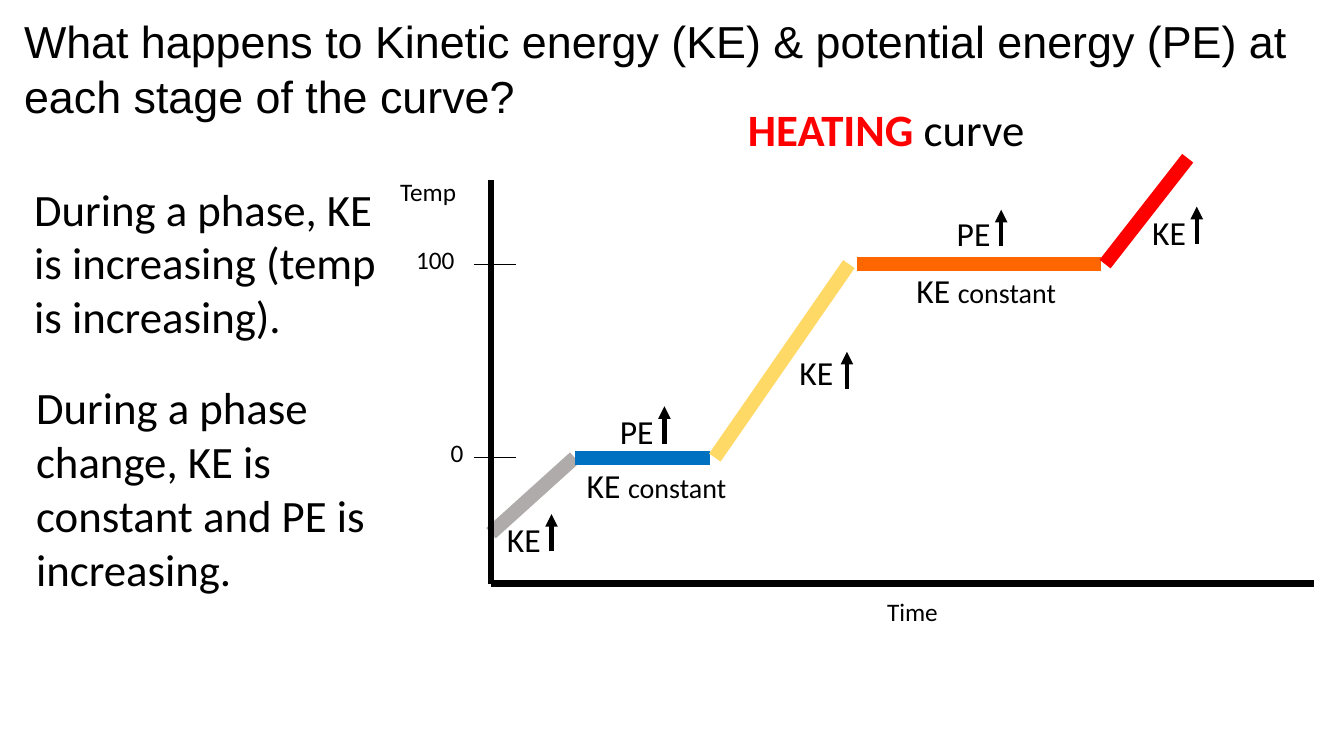
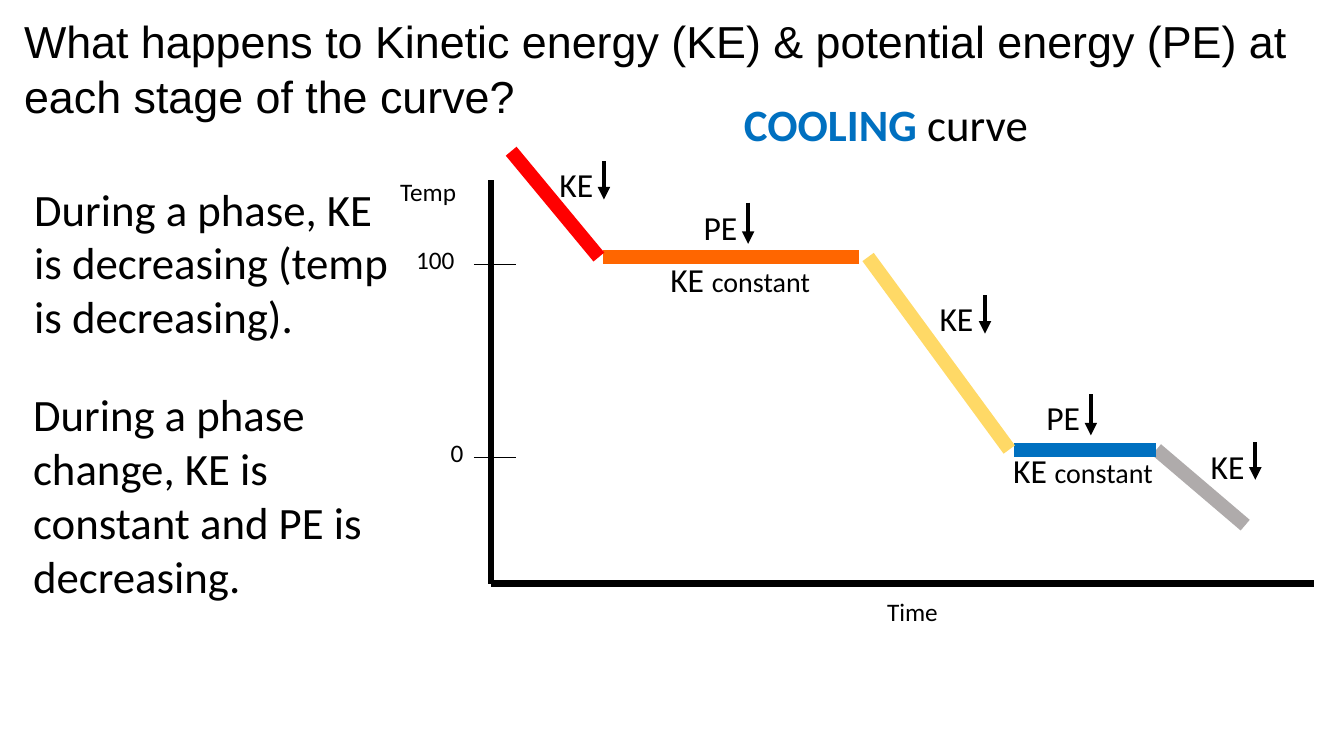
"""Build two slides on kinetic and potential energy along heating and cooling curves."""
from lxml import etree
from pptx import Presentation
from pptx import util as u
from pptx.dml.color import RGBColor
from pptx.enum import shapes, text
from pptx.oxml.ns import qn

PX = 9144
BLACK, RED, ORANGE = "000000", "FF0000", "FF6600"
YELLOW, BLUE, GRAY = "FFD966", "0070C0", "AFABAB"
TITLE = "What happens to Kinetic energy (KE) & potential energy (PE) at each stage of the curve?"
TITLE_BOX = (14, 8, 1319, 118)

AXIS_LINES = [
    (487, 179, 487, 579, 4.5),
    (487, 579, 1303, 579, 4.5),
    (470, 454, 512, 454, 0.75),
    (470, 262, 512, 262, 0.75),
]
AXIS_LABELS = [
    ("0", (437, 429, 37, 50)),
    ("100", (403, 237, 70, 50)),
    ("Time", (870, 587, 90, 50)),
    ("Temp", (387, 170, 98, 50)),
]

CURVES = [
    {
        "heading": ("HEATING", RED, (732, 96, 307, 64)),
        "statements": [
            ("During a phase, KE is increasing (temp is increasing).", (24, 175, 360, 172)),
            ("During a phase change, KE is constant and PE is increasing.", (26, 372, 360, 226)),
        ],
        "segments": [
            (487, 529, 570, 454, GRAY),
            (570, 454, 704, 454, BLUE),
            (709, 454, 842, 262, YELLOW),
            (850, 262, 1092, 262, ORANGE),
            (1096, 262, 1178, 157, RED),
        ],
        "constants": [(572, 456), (899, 263)],
        "changes": [
            ("KE", 493, 510, 547, 547, 510),
            ("PE", 605, 403, 659, 440, 403),
            ("KE", 783, 344, 840, 386, 349),
            ("PE", 939, 206, 993, 244, 208),
            ("KE", 1133, 205, 1187, 242, 205),
        ],
    },
    {
        "heading": ("COOLING", BLUE, (728, 91, 315, 64)),
        "statements": [
            ("During a phase, KE is decreasing (temp is decreasing).", (24, 175, 384, 172)),
            ("During a phase change, KE is constant and PE is decreasing.", (23, 379, 360, 226)),
        ],
        "segments": [
            (1235, 521, 1147, 446, GRAY),
            (1147, 446, 1006, 446, BLUE),
            (1001, 446, 861, 255, YELLOW),
            (852, 255, 598, 255, ORANGE),
            (594, 255, 507, 150, RED),
        ],
        "constants": [(655, 252), (995, 441)],
        "changes": [
            ("KE", 545, 158, 599, 160, 198),
            ("PE", 688, 200, 742, 201, 242),
            ("KE", 922, 291, 977, 293, 331),
            ("PE", 1028, 389, 1082, 391, 432),
            ("KE", 1191, 437, 1245, 439, 476),
        ],
    },
]


def add_line(slide, ends, color, width, arrow=False):
    line = slide.shapes.add_connector(shapes.MSO_CONNECTOR.STRAIGHT, *(value * PX for value in ends))
    line.line.color.rgb = RGBColor.from_string(color)
    line.line.width = u.Pt(width)
    if arrow:
        etree.SubElement(line.line._get_or_add_ln(), qn("a:tailEnd"), type="triangle")
    etree.SubElement(line._element.spPr, qn("a:effectLst"))


def add_text(slide, box, runs, wrap=False, font="Calibri", spacing=None):
    shape = slide.shapes.add_textbox(*(value * PX for value in box))
    shape.text_frame.word_wrap = wrap
    shape.text_frame.auto_size = text.MSO_AUTO_SIZE.SHAPE_TO_FIT_TEXT
    paragraph = shape.text_frame.paragraphs[0]
    paragraph.line_spacing = spacing
    for words, size, color, bold in runs:
        run = paragraph.add_run()
        run.text = words
        run.font.color.rgb = RGBColor.from_string(color)
        for name, value in {"name": font, "size": u.Pt(size), "bold": bold}.items():
            setattr(run.font, name, value)


presentation = Presentation()
presentation.slide_width, presentation.slide_height = 1333 * PX, 750 * PX

for curve in CURVES:
    slide = presentation.slides.add_slide(presentation.slide_layouts[6])

    for *ends, color in curve["segments"]:
        add_line(slide, ends, color, 10)
    for *ends, width in AXIS_LINES:
        add_line(slide, ends, BLACK, width)
    for label, box in AXIS_LABELS:
        add_text(slide, box, [(label, 18, BLACK, False)])

    add_text(slide, TITLE_BOX, [(TITLE, 32, BLACK, False)], wrap=True, font="Arial", spacing=u.Pt(39))
    word, color, box = curve["heading"]
    add_text(slide, box, [(word, 32, color, True), (" curve", 32, BLACK, False)])
    for statement, box in curve["statements"]:
        add_text(slide, box, [(statement, 32, BLACK, False)], wrap=True)

    for left, top in curve["constants"]:
        add_text(slide, (left, top, 160, 50), [("KE ", 24, BLACK, False), ("constant", 20, BLACK, False)])
    for label, left, top, arrow_left, start, end in curve["changes"]:
        add_text(slide, (left, top, 54, 50), [(label, 24, BLACK, False)])
        add_line(slide, (arrow_left, start, arrow_left, end), BLACK, 3, arrow=True)

presentation.save("out.pptx")
